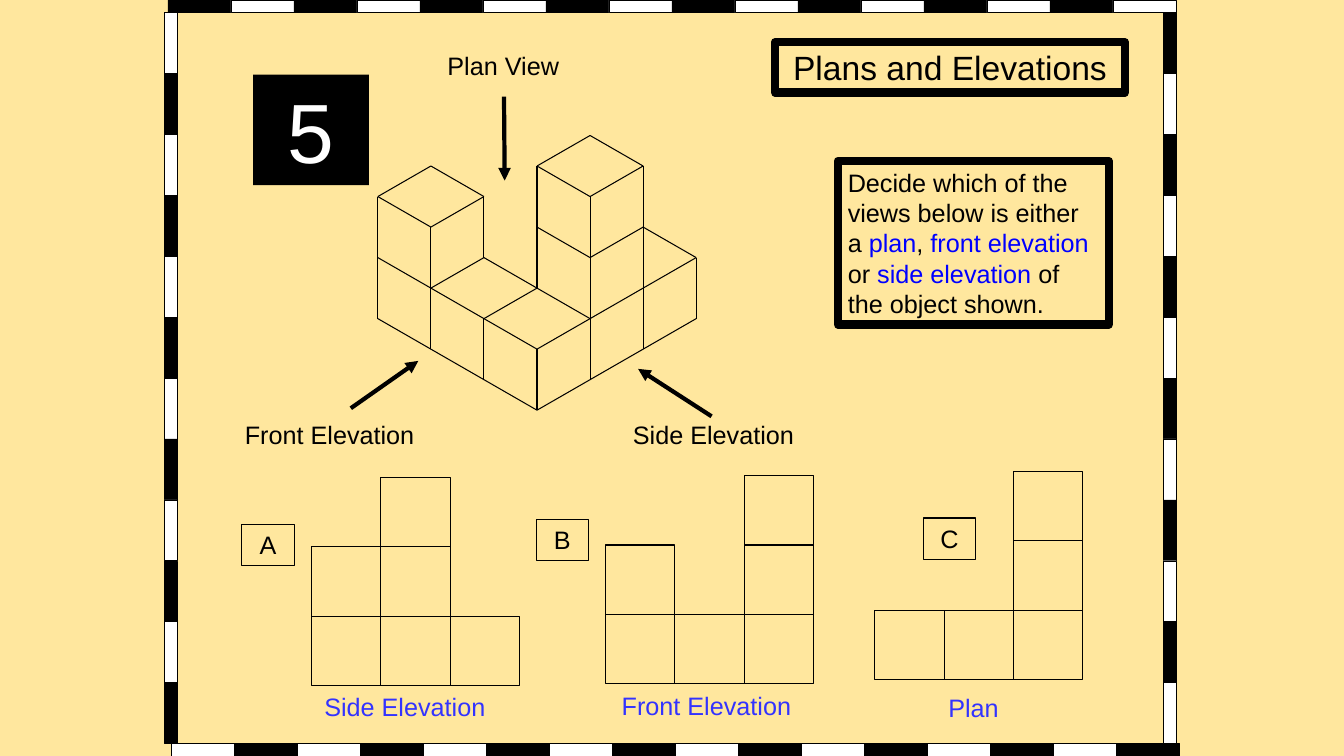
"""Builds the slide 'Plans and Elevations' with an isometric solid and its three views."""
from lxml.etree import SubElement
from pptx import Presentation
from pptx.dml.color import RGBColor
from pptx.enum.shapes import MSO_CONNECTOR as CONN, MSO_SHAPE as SHAPE
from pptx.enum.text import MSO_ANCHOR as ANCHOR, MSO_AUTO_SIZE as AUTO, PP_ALIGN as ALIGN
from pptx.oxml.ns import qn
from pptx.util import Pt

BLACK = RGBColor(0x00, 0x00, 0x00)
WHITE = RGBColor(0xFF, 0xFF, 0xFF)
SAND = RGBColor(0xFF, 0xE7, 0x9E)
BLUE = RGBColor(0x00, 0x00, 0xFF)
ANSWER_BLUE = RGBColor(0x33, 0x33, 0xFF)

CELL = 49.5
FRAME_THICKNESS = 9
ISO_X, ISO_Y = 383.6, 293
ISO_DX, ISO_DY = 37.9, 21.8

# Ends of each edge as (column, row) steps from the solid's lowest corner.
EDGES = [
    ((0, 0), (3, 3)), ((0, 0), (-3, 3)), ((0, 0), (0, 2)),
    ((0, 2), (3, 5)), ((0, 2), (-3, 5)), ((-2, 2), (-2, 6)),
    ((-1, 1), (-1, 3)), ((1, 3), (-1, 5)), ((-2, 4), (-1, 5)),
    ((-1, 3), (0, 4)), ((0, 4), (0, 8)), ((1, 5), (2, 6)),
    ((1, 5), (0, 6)), ((1, 1), (1, 7)), ((2, 2), (2, 8)),
    ((0, 8), (1, 7)), ((1, 7), (2, 8)), ((1, 9), (2, 8)),
    ((0, 8), (1, 9)), ((-3, 7), (-3, 3)), ((-1, 5), (-1, 7)),
    ((-2, 6), (-1, 7)), ((-2, 6), (-3, 7)), ((-3, 7), (-2, 8)),
    ((-2, 8), (-1, 7)), ((3, 5), (3, 3)), ((3, 5), (2, 6)),
]

POINTERS = [
    ("Plan View", (312.5, 32.4, 101), (360, 69), (360.5, 129)),
    ("Front Elevation", (167.8, 296, 140.5), (250.6, 291.6), (298.8, 257.8)),
    ("Side Elevation", (445, 296, 140.5), (508.3, 297.4), (455.8, 263.5)),
]

# Letter and place, left and top of the base row, column heights, answer and place.
VIEWS = [
    ("A", (172.8, 374.4), (222.6, 440.2), (2, 3, 1), "Side Elevation", (224.6, 490.4)),
    ("B", (383, 370.8), (432.6, 438.8), (2, 1, 3), "Front Elevation", (437, 489.6)),
    ("C", (659.5, 370), (625, 435.8), (1, 1, 3), "Plan", (670.3, 491)),
]

INSTRUCTION = [
    ("Decide which of the views below is either a ", BLACK), ("plan", BLUE),
    (", ", BLACK), ("front elevation", BLUE), (" or ", BLACK),
    ("side elevation", BLUE), (" of the object shown.", BLACK),
]


def add_rect(slide, x, y, w, h, fill=None, line=BLACK, weight=0.75):
    sp = slide.shapes.add_shape(SHAPE.RECTANGLE, Pt(x), Pt(y), Pt(w), Pt(h))
    sp.shadow.inherit = False
    paint(sp, fill, line, weight)
    return sp


def paint(sp, fill, line, weight):
    if fill is None:
        sp.fill.background()
    else:
        sp.fill.solid()
        sp.fill.fore_color.rgb = fill
    if line is None:
        sp.line.fill.background()
    else:
        sp.line.color.rgb = line
        sp.line.width = Pt(weight)


def set_text(sp, runs, size=18, color=BLACK, align=ALIGN.LEFT, anchor=ANCHOR.MIDDLE):
    tf = sp.text_frame
    tf.word_wrap = True
    tf.auto_size = AUTO.NONE
    tf.vertical_anchor = anchor
    p = tf.paragraphs[0]
    p.alignment = align
    p.font.name, p.font.size = "Arial", Pt(size)
    if isinstance(runs, str):
        p.add_run().text = runs
        p.font.color.rgb = color
        return
    for text, run_color in runs:
        r = p.add_run()
        r.text = text
        r.font.color.rgb = run_color


def add_label(slide, text, x, y, w, color=BLACK):
    sp = slide.shapes.add_textbox(Pt(x), Pt(y), Pt(w), Pt(29))
    set_text(sp, text, color=color, anchor=ANCHOR.TOP)


def add_line(slide, start, end, weight=0.75, arrow=False):
    ends = [Pt(v) for v in (*start, *end)]
    cx = slide.shapes.add_connector(CONN.STRAIGHT, *ends)
    cx.line.color.rgb = BLACK
    cx.line.width = Pt(weight)
    if arrow:
        SubElement(cx.line._get_or_add_ln(), qn("a:tailEnd"), type="triangle")
    SubElement(cx._element.spPr, qn("a:effectLst"))


def add_frame_side(slide, x, y, step, count, colors, vertical=False):
    for i in range(count):
        fill = colors[i % 2]
        if vertical:
            add_rect(slide, x, y + i * step, FRAME_THICKNESS, step, fill, weight=0.25)
        else:
            add_rect(slide, x + i * step, y, step, FRAME_THICKNESS, fill, weight=0.25)


def add_title(slide, text):
    sp = slide.shapes.title
    sp.left, sp.top, sp.width, sp.height = Pt(553.7), Pt(30.2), Pt(249.8), Pt(36)
    paint(sp, None, BLACK, 6)
    set_text(sp, text, size=24, align=ALIGN.CENTER)


def iso_point(column, row):
    return ISO_X + column * ISO_DX, ISO_Y - row * ISO_DY


def add_solid(slide):
    for start, end in EDGES:
        add_line(slide, iso_point(*start), iso_point(*end))


def add_view(slide, letter, letter_at, base, heights, answer, answer_at):
    x, y = base
    for column, height in enumerate(heights):
        for row in range(height):
            add_rect(slide, x + column * CELL, y - row * CELL, CELL, CELL)
    set_text(add_rect(slide, *letter_at, 37.4, 29.5), letter, align=ALIGN.CENTER)
    add_label(slide, answer, *answer_at, 160, ANSWER_BLUE)


def main():
    prs = Presentation()
    prs.slide_width, prs.slide_height = Pt(960), Pt(540)
    slide = prs.slides.add_slide(prs.slide_layouts[5])
    slide.background.fill.solid()
    slide.background.fill.fore_color.rgb = SAND

    add_frame_side(slide, 120, 0, 45, 16, (BLACK, WHITE))
    add_frame_side(slide, 122.4, 531, 45, 16, (WHITE, BLACK))
    add_frame_side(slide, 831, 9, 43.5, 12, (BLACK, WHITE), vertical=True)
    add_frame_side(slide, 117.3, 9, 43.5, 12, (WHITE, BLACK), vertical=True)

    add_title(slide, "Plans and Elevations")
    number = add_rect(slide, 180.8, 53.3, 82.8, 79, fill=BLACK, line=None)
    set_text(number, "5", size=60, color=WHITE, align=ALIGN.CENTER)
    task = add_rect(slide, 598.5, 115, 193.5, 116.8, weight=6)
    set_text(task, INSTRUCTION)

    for text, place, start, end in POINTERS:
        add_label(slide, text, *place)
        add_line(slide, start, end, weight=3, arrow=True)
    add_solid(slide)
    for view in VIEWS:
        add_view(slide, *view)
    prs.save("out.pptx")


if __name__ == "__main__":
    main()
